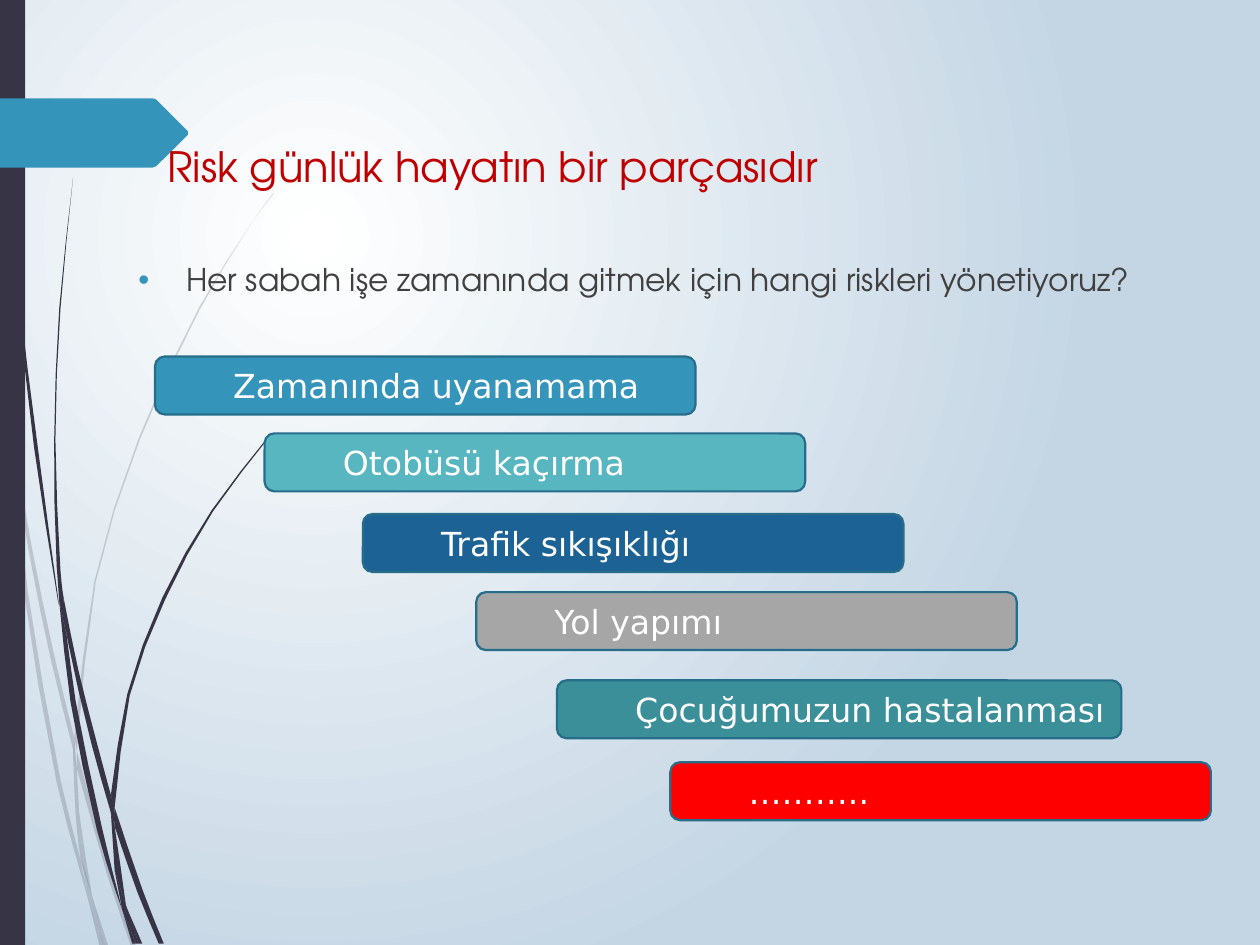
"""Build the everyday-risk slide with its cascade of morning risks."""
import math
from typing import NamedTuple

import lxml.etree
import pptx
import pptx.dml.color
import pptx.enum.shapes
import pptx.enum.text
import pptx.oxml.ns
import pptx.util

Inches = pptx.util.Inches
Pt = pptx.util.Pt
qn = pptx.oxml.ns.qn
Points = list[tuple[float, float]]

DARK, BLUE, BORDER = "373545", "3494BA", "266D8A"
HEAD_FONT, BAR_FONT = "TeX Gyre Adventor", "DejaVu Sans"
BAR_W, BAR_H = 4.29, 0.46


class Blade(NamedTuple):
    out: Points
    back: Points


class Bar(NamedTuple):
    text: str
    left: float
    top: float
    fill: str
    width: float = BAR_W


PALE_BLADES = [
    Blade([(0, 2.82), (0.06, 3.22), (0.08, 3.5)], [(0.07, 3.44), (0, 2.99)]),
    Blade([(0.1, 3.45), (0.25, 4.33), (0.43, 5.2), (0.59, 5.86)],
          [(0.59, 5.99), (0.4, 5.22), (0.25, 4.49), (0.12, 3.76)]),
    Blade([(0.61, 5.96), (0.64, 6.07), (0.88, 6.92), (1.08, 7.51)],
          [(1.04, 7.51), (0.85, 6.94), (0.61, 6.1)]),
    Blade([(0.73, 7.11), (0.86, 7.51)], [(0.83, 7.51)]),
    Blade([(0.08, 3.5), (0.12, 3.76), (0.22, 4.69), (0.48, 6.19), (0.64, 6.83), (0.7, 7.14)],
          [(0.64, 6.93), (0.45, 6.21), (0.19, 4.7), (0.08, 3.5)]),
    Blade([(0.58, 5.99), (0.61, 6.1), (0.63, 6.46), (0.73, 7.11)],
          [(0.67, 6.92), (0.64, 6.83), (0.6, 6.46), (0.58, 5.99)]),
    Blade([(0.59, 5.86), (0.75, 4.61), (1.1, 3.48), (1.58, 2.44), (2.01, 1.75), (2.17, 1.53)],
          [(2.17, 1.54), (2.01, 1.75), (1.59, 2.45), (1.11, 3.49), (0.76, 4.62), (0.61, 5.96)]),
    Blade([(0.7, 7.14), (0.82, 7.51)], [(0.79, 7.51)]),
    Blade([(0.59, 5.86), (0.61, 6.1)], [(0.58, 5.99)]),
    Blade([(0.65, 6.83), (0.73, 7.11), (0.83, 7.51)], [(0.82, 7.51), (0.7, 7.14)]),
]

DARK_BLADES = [
    Blade([(0.03, 0), (0.06, 1.09), (0.15, 2.32), (0.3, 3.55), (0.47, 4.81)],
          [(0.46, 4.77), (0.27, 3.55), (0.14, 2.33), (0.05, 1.1), (0.02, 0)]),
    Blade([(0.5, 4.72), (0.62, 5.31), (0.77, 5.9), (0.88, 6.31)],
          [(0.88, 6.45), (0.73, 5.92), (0.53, 5.05), (0.5, 4.72)]),
    Blade([(0.91, 6.41), (1.13, 7.06), (1.3, 7.49)], [(1.26, 7.49), (1.09, 7.08), (0.91, 6.56)]),
    Blade([(0.47, 4.77), (0.53, 5.05), (0.6, 5.56), (0.81, 6.57), (0.97, 7.22)],
          [(0.92, 7.08), (0.77, 6.59), (0.56, 5.57), (0.47, 4.77)]),
    Blade([(0.58, 1.41), (0.48, 2.45), (0.44, 3.49), (0.48, 4.53), (0.5, 4.72)],
          [(0.49, 4.72), (0.45, 4.49), (0.43, 3.49), (0.47, 2.45), (0.58, 1.41)]),
    Blade([(1, 7.19), (1.13, 7.49)], [(1.1, 7.49)]),
    Blade([(0.45, 4.49), (0.5, 4.72), (0.53, 5.05)], [(0.47, 4.77)]),
    Blade([(0.88, 6.31), (1.01, 5.51), (1.29, 4.74), (1.68, 4.05), (2.15, 3.44)],
          [(2.16, 3.44), (1.69, 4.06), (1.31, 4.76), (1.03, 5.52), (0.91, 6.41)]),
    Blade([(0.97, 7.22), (1.08, 7.49)], [(1.05, 7.49)]),
    Blade([(0.88, 6.45), (0.91, 6.56), (1, 7.19)], [(0.91, 6.91)]),
    Blade([(0.88, 6.31), (0.91, 6.41), (0.91, 6.56)], [(0.88, 6.45)]),
    Blade([(0.91, 6.91), (1.1, 7.49)], [(1.08, 7.49), (0.97, 7.22)]),
]

TAG = [(0, 0.78), (1.21, 0.78), (1.24, 0.79), (1.49, 1.04), (1.49, 1.07),
       (1.24, 1.32), (1.21, 1.33), (0, 1.33)]

BARS = [
    Bar("Zamanında uyanamama", 1.23, 2.83, BLUE),
    Bar("Otobüsü kaçırma", 2.1, 3.44, "58B6C0"),
    Bar("Trafik sıkışıklığı", 2.88, 4.08, "1D6294"),
    Bar("Yol yapımı", 3.78, 4.7, "A6A6A6"),
    Bar("Çocuğumuzun hastalanması", 4.42, 5.4, "3A8F98", 4.48),
    Bar("………..", 5.32, 6.05, "FF0000"),
]


def rgb(color: str) -> pptx.dml.color.RGBColor:
    return pptx.dml.color.RGBColor.from_string(color)


def paint(sp, color: str, line: str | None = None) -> None:
    sp.shadow.inherit = False
    sp.fill.solid()
    sp.fill.fore_color.rgb = rgb(color)
    if line:
        sp.line.color.rgb = rgb(line)
        sp.line.width = Pt(1.25)
    else:
        sp.line.fill.background()


def smooth(pts: Points) -> Points:
    if len(pts) < 3:
        return pts
    last = len(pts) - 1
    knots = [0.0]
    for a, b in zip(pts, pts[1:]):
        knots.append(knots[-1] + math.dist(a, b))
    slopes = []
    for i in range(last + 1):
        lo, hi = max(i - 1, 0), min(i + 1, last)
        slopes.append([(pts[hi][k] - pts[lo][k]) / (knots[hi] - knots[lo]) for k in (0, 1)])
    curve = [pts[0]]
    for i in range(last):
        h = knots[i + 1] - knots[i]
        middle = tuple((pts[i][k] + pts[i + 1][k]) / 2 + h * (slopes[i][k] - slopes[i + 1][k]) / 8
                       for k in (0, 1))
        curve += [middle, pts[i + 1]]
    return curve


def draw_outline(s, pts: Points, color: str, alpha: int = 100) -> None:
    emu = [(Inches(x), Inches(y)) for x, y in pts]
    builder = s.shapes.build_freeform(*emu[0])
    builder.add_line_segments(emu[1:], close=True)
    sp = builder.convert_to_shape()
    paint(sp, color)
    if alpha < 100:
        clr = sp._element.spPr.find(qn("a:solidFill"))[0]
        lxml.etree.SubElement(clr, qn("a:alpha"), val=str(alpha * 1000))


def write(tf, text: str, font: str, size: float, color: str):
    tf.word_wrap = True
    tf.text = text
    p = tf.paragraphs[0]
    p.alignment = pptx.enum.text.PP_ALIGN.LEFT
    r = p.runs[0]
    r.font.name, r.font.size, r.font.color.rgb = font, Pt(size), rgb(color)
    return p


def indent(p, left: float, first: float = 0) -> None:
    pPr = p._p.get_or_add_pPr()
    pPr.set("marL", str(Inches(left)))
    pPr.set("indent", str(Inches(first)))


def draw_bar(s, bar: Bar) -> None:
    sp = s.shapes.add_shape(pptx.enum.shapes.MSO_SHAPE.ROUNDED_RECTANGLE, Inches(bar.left),
                            Inches(bar.top), Inches(bar.width), Inches(BAR_H))
    paint(sp, bar.fill, BORDER)
    sp.text_frame.vertical_anchor = pptx.enum.text.MSO_ANCHOR.MIDDLE
    p = write(sp.text_frame, bar.text, BAR_FONT, 18.9, "FFFFFF")
    p.level = 1
    indent(p, 0.5)


def set_background(s) -> None:
    fill = s.background.fill
    fill.gradient()
    for stop, color in zip(fill.gradient_stops, ("FFFFFF", "C4D5E4")):
        stop.color.rgb = rgb(color)
    grad = s._element.find(".//" + qn("a:gradFill"))
    grad.remove(grad.find(qn("a:lin")))
    circle = lxml.etree.SubElement(grad, qn("a:path"), path="circle")
    lxml.etree.SubElement(circle, qn("a:fillToRect"), l="50000", t="50000", r="100000", b="100000")


def main() -> None:
    prs = pptx.Presentation()
    prs.slide_width, prs.slide_height = Inches(10), Inches(7.5)
    s = prs.slides.add_slide(prs.slide_layouts[5])
    set_background(s)
    for blades, alpha in ((PALE_BLADES, 20), (DARK_BLADES, 100)):
        for blade in blades:
            draw_outline(s, smooth(blade.out) + smooth(blade.back), DARK, alpha)
    strip = s.shapes.add_shape(pptx.enum.shapes.MSO_SHAPE.RECTANGLE, 0, 0, Inches(0.2), prs.slide_height)
    paint(strip, DARK)
    draw_outline(s, TAG, BLUE)

    title = s.shapes.title
    title.left, title.top, title.width, title.height = map(Inches, (1.23, 1.07, 8.01, 0.73))
    title.text_frame.vertical_anchor = pptx.enum.text.MSO_ANCHOR.TOP
    write(title.text_frame, "Risk günlük hayatın bir parçasıdır", HEAD_FONT, 23.9, "C00000")
    s.shapes._spTree.append(title._element)

    body = s.shapes.add_textbox(*map(Inches, (1, 2.02, 8.09, 4.24)))
    p = write(body.text_frame, "Her sabah işe zamanında gitmek için hangi riskleri yönetiyoruz?",
              HEAD_FONT, 17.9, "404040")
    p.space_before = Pt(10)
    indent(p, 0.38, -0.38)
    pPr = p._p.get_or_add_pPr()
    bullet_color = lxml.etree.SubElement(pPr, qn("a:buClr"))
    lxml.etree.SubElement(bullet_color, qn("a:srgbClr"), val=BLUE)
    lxml.etree.SubElement(pPr, qn("a:buFont"), typeface="Arial")
    lxml.etree.SubElement(pPr, qn("a:buChar"), char="•")
    for bar in BARS:
        draw_bar(s, bar)
    prs.save("out.pptx")


if __name__ == "__main__":
    main()
